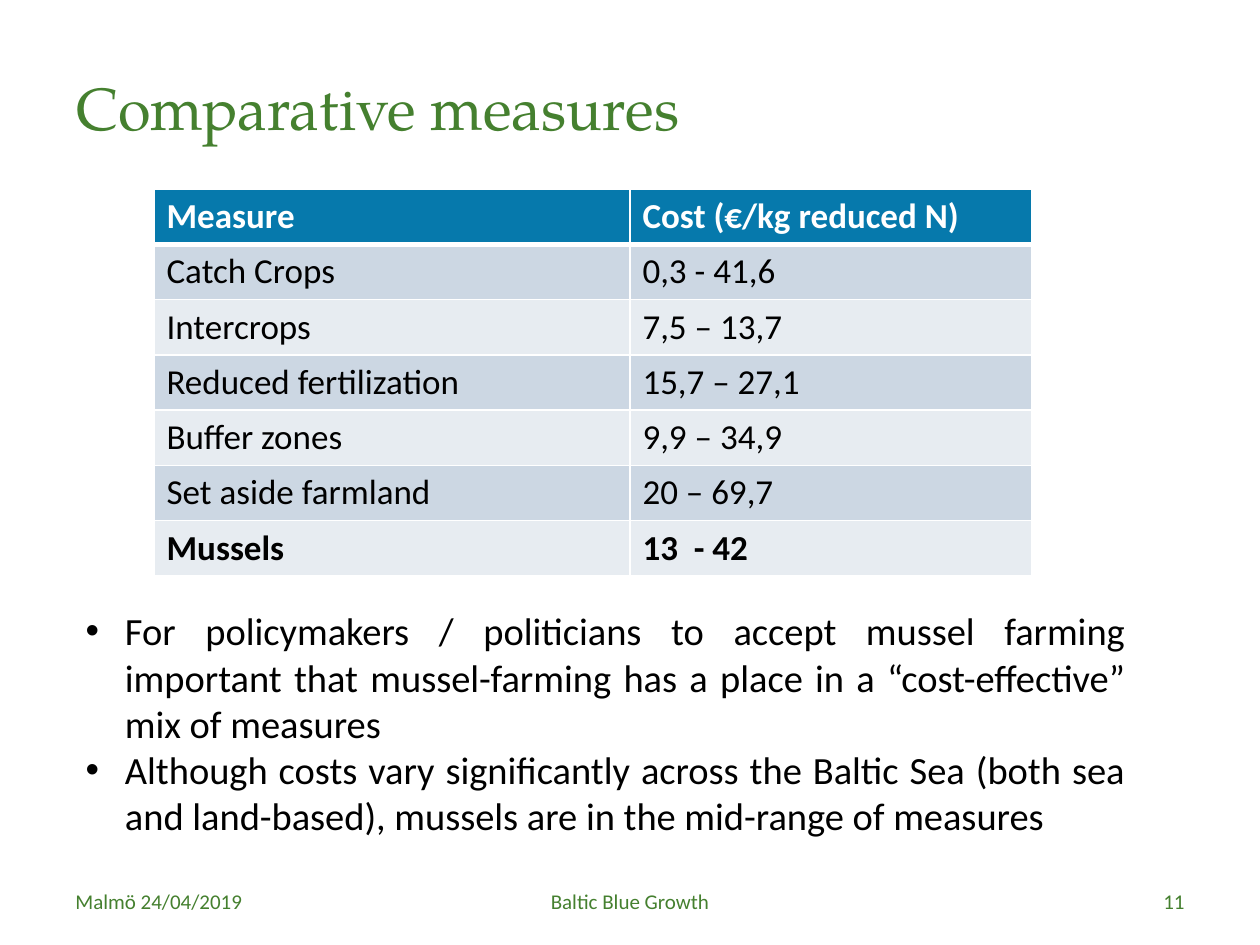
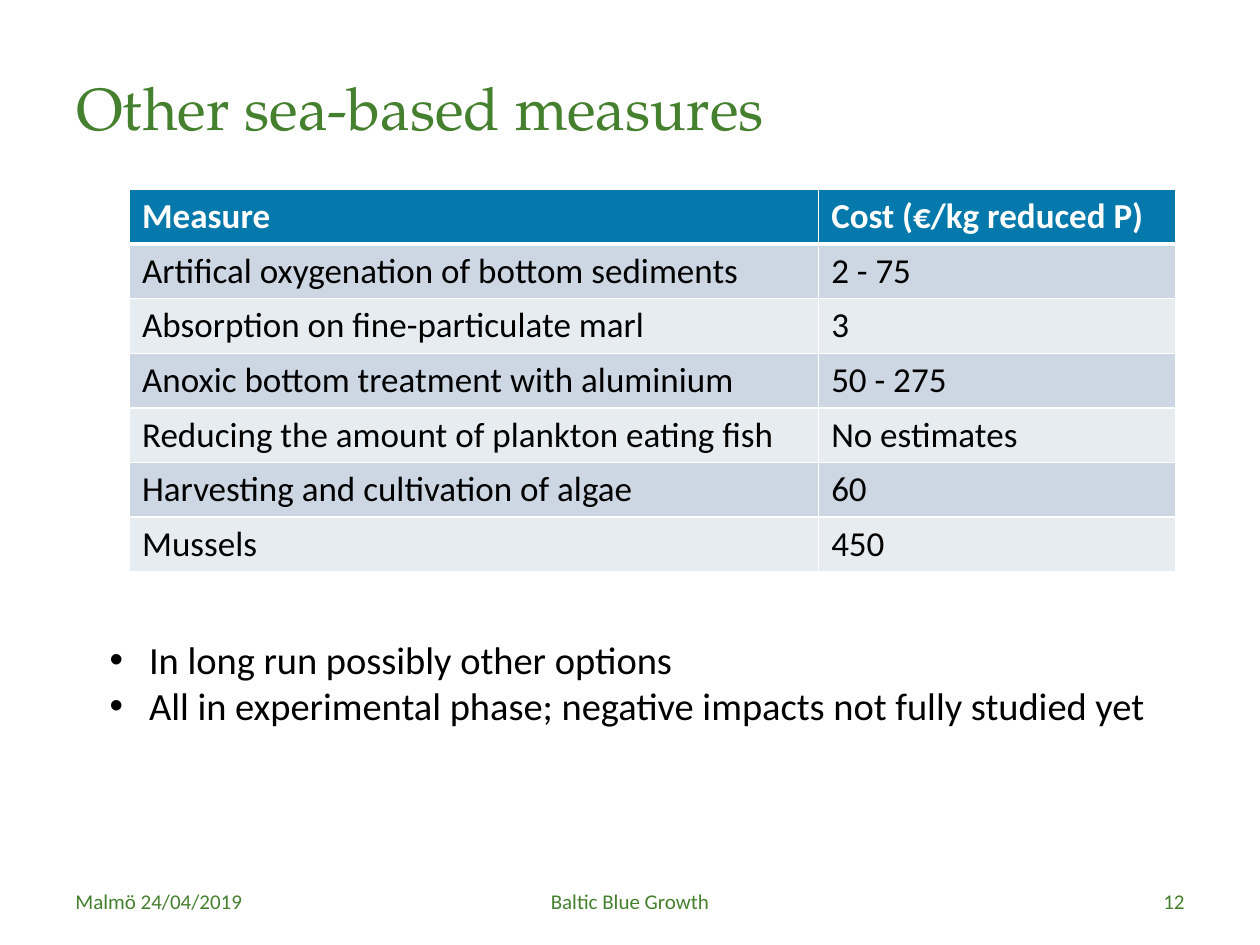
from collections import namedtuple
from dataclasses import dataclass

import lxml.etree
import pptx
import pptx.dml.color
import pptx.enum.text
import pptx.oxml
import pptx.oxml.ns
import pptx.util

Pt = pptx.util.Pt
Align = pptx.enum.text.PP_ALIGN
Anchor = pptx.enum.text.MSO_ANCHOR
qn = pptx.oxml.ns.qn
Box = namedtuple("Box", "left top width height")


@dataclass(frozen=True)
class Theme:
    green: str = "45802F"
    header: str = "0679AC"
    bands: tuple = ("CCD7E3", "E7ECF1")
    white: str = "FFFFFF"
    black: str = "000000"
    title_font: str = "TeX Gyre Pagella"
    body_font: str = "Calibri"
    title_size: int = 34
    bullet_size: int = 22
    table_size: int = 20
    footer_size: int = 12
    table_line: float = 24.4
    bullet_indent: float = 22.5
    rule: int = 1
    header_rule: int = 3


THEME = Theme()
TITLE_BOX = Box(36.5, 16, 648, 90)
FOOTER_BOX = Box(36, 500.5, 648, 28.8)


def style(para, size, color, font=THEME.body_font, bold=False):
    para.font.size = Pt(size)
    para.font.name = font
    para.font.bold = bold
    para.font.color.rgb = pptx.dml.color.RGBColor.from_string(color)


def add_text_frame(page, box, anchor):
    frame = page.shapes.add_textbox(*map(Pt, box)).text_frame
    frame.word_wrap = True
    frame.vertical_anchor = anchor
    return frame


def add_title(page, box, text):
    para = add_text_frame(page, box, Anchor.MIDDLE).paragraphs[0]
    para.text = text
    style(para, THEME.title_size, THEME.green, THEME.title_font)


def add_footer(page, box, number):
    side, middle = 168, 228
    parts = (
        ("Malmö 24/04/2019", 0, side, Align.LEFT),
        ("Baltic Blue Growth", (box.width - middle) / 2, middle, Align.CENTER),
        (str(number), box.width - side, side, Align.RIGHT),
    )
    for text, offset, width, alignment in parts:
        part_box = Box(box.left + offset, box.top, width, box.height)
        para = add_text_frame(page, part_box, Anchor.MIDDLE).paragraphs[0]
        para.text = text
        para.alignment = alignment
        style(para, THEME.footer_size, THEME.green)


def add_bullets(page, box, texts):
    frame = add_text_frame(page, box, Anchor.TOP)
    for index, text in enumerate(texts):
        para = frame.add_paragraph() if index else frame.paragraphs[0]
        para.text = text
        para.alignment = Align.JUSTIFY
        properties = para._p.get_or_add_pPr()
        properties.set("marL", str(Pt(THEME.bullet_indent)))
        properties.set("indent", str(-Pt(THEME.bullet_indent)))
        lxml.etree.SubElement(properties, qn("a:buFont"), typeface="Arial")
        lxml.etree.SubElement(properties, qn("a:buChar"), char="•")
        style(para, THEME.bullet_size, THEME.black)


def set_borders(cell, top, bottom):
    properties = cell._tc.get_or_add_tcPr()
    widths = {"lnL": THEME.rule, "lnR": THEME.rule, "lnT": top, "lnB": bottom}
    for index, (side, width) in enumerate(widths.items()):
        line = pptx.oxml.parse_xml(
            f'<a:{side} {pptx.oxml.ns.nsdecls("a")} w="{Pt(width)}"><a:solidFill>'
            f'<a:srgbClr val="{THEME.white}"/></a:solidFill></a:{side}>'
        )
        properties.insert(index, line)


def add_cost_table(page, box, first_width, rows, bold_rows):
    table = page.shapes.add_table(len(rows), 2, *map(Pt, box)).table
    table.columns[0].width = Pt(first_width)
    table.columns[1].width = Pt(box.width - first_width)
    row_height = box.height / len(rows)
    margin = Pt((row_height - THEME.table_line) / 2)
    for row_index, values in enumerate(rows):
        table.rows[row_index].height = Pt(row_height)
        is_header = row_index == 0
        fill = THEME.header if is_header else THEME.bands[(row_index - 1) % 2]
        top = THEME.header_rule if row_index == 1 else THEME.rule
        bottom = THEME.header_rule if is_header else THEME.rule
        for column_index, value in enumerate(values):
            cell = table.cell(row_index, column_index)
            cell.margin_top = cell.margin_bottom = margin
            cell.fill.solid()
            cell.fill.fore_color.rgb = pptx.dml.color.RGBColor.from_string(fill)
            set_borders(cell, top, bottom)
            para = cell.text_frame.paragraphs[0]
            para.text = value
            color = THEME.white if is_header else THEME.black
            style(para, THEME.table_size, color, bold=row_index in bold_rows)


def add_measures_page(deck, number, title, table_box, first_width, rows,
                      bold_rows, bullet_box, bullets):
    page = deck.slides.add_slide(deck.slide_layouts[6])
    add_title(page, TITLE_BOX, title)
    add_cost_table(page, table_box, first_width, rows, bold_rows)
    add_bullets(page, bullet_box, bullets)
    add_footer(page, FOOTER_BOX, number)


def main():
    deck = pptx.Presentation()
    deck.slide_width = Pt(720)
    deck.slide_height = Pt(540)
    add_measures_page(
        deck, 11, "Comparative measures",
        Box(88, 108, 501.5, 221.2), 272,
        (
            ("Measure", "Cost (€/kg reduced N)"),
            ("Catch Crops", "0,3 - 41,6"),
            ("Intercrops", "7,5 – 13,7"),
            ("Reduced fertilization", "15,7 – 27,1"),
            ("Buffer zones", "9,9 – 34,9"),
            ("Set aside farmland", "20 – 69,7"),
            ("Mussels", "13  - 42"),
        ),
        (0, 6),
        Box(41.8, 343.5, 608.4, 140.4),
        (
            "For policymakers / politicians to accept mussel farming important that "
            "mussel-farming has a place in a “cost-effective” mix of measures",
            "Although costs vary significantly across the Baltic Sea (both sea and "
            "land-based), mussels are in the mid-range of measures",
        ),
    )
    add_measures_page(
        deck, 12, "Other sea-based measures",
        Box(74, 108.3, 597.8, 218.4), 393.8,
        (
            ("Measure", "Cost (€/kg reduced P)"),
            ("Artifical oxygenation of bottom sediments", "2 - 75"),
            ("Absorption on fine-particulate marl", "3"),
            ("Anoxic bottom treatment with aluminium", "50 - 275"),
            ("Reducing the amount of plankton eating fish", "No estimates"),
            ("Harvesting and cultivation of algae", "60"),
            ("Mussels", "450"),
        ),
        (0,),
        Box(55.6, 360, 608.4, 60.5),
        (
            "In long run possibly other options",
            "All in experimental phase; negative impacts not fully studied yet",
        ),
    )
    deck.save("out.pptx")


if __name__ == "__main__":
    main()
